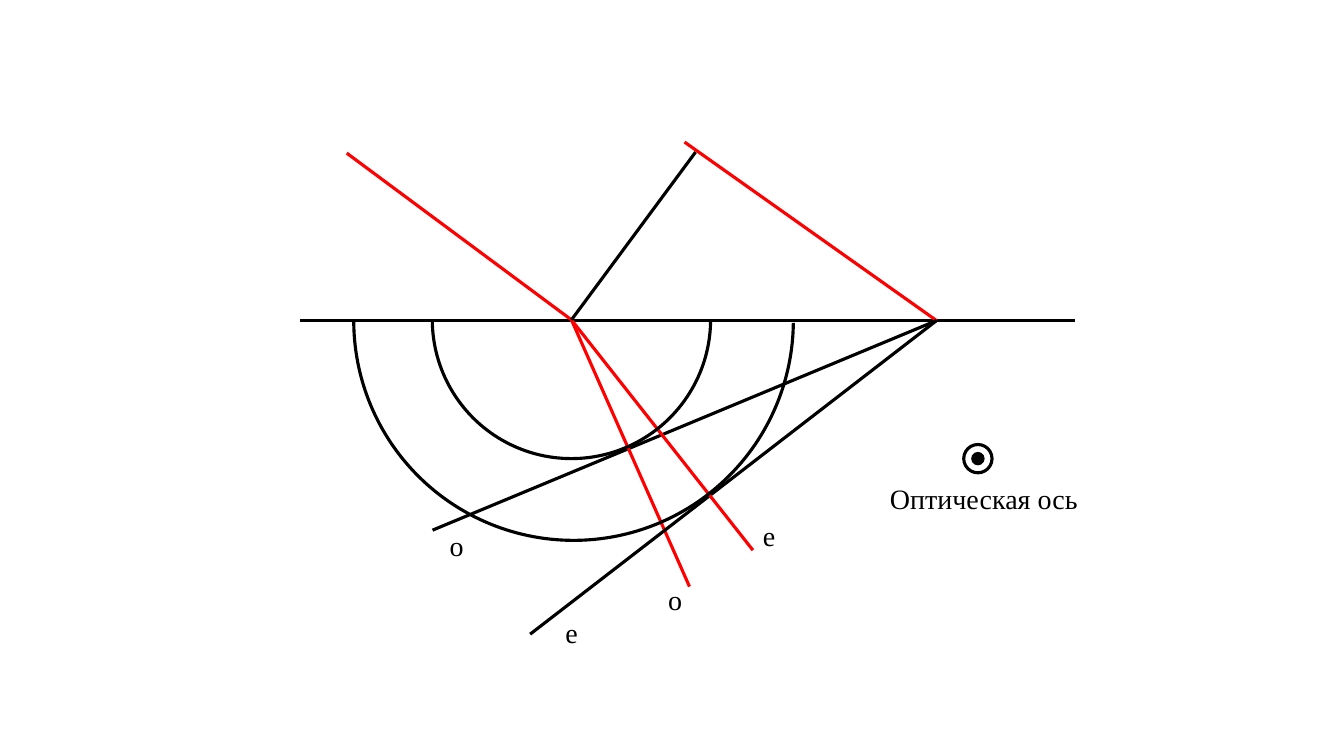
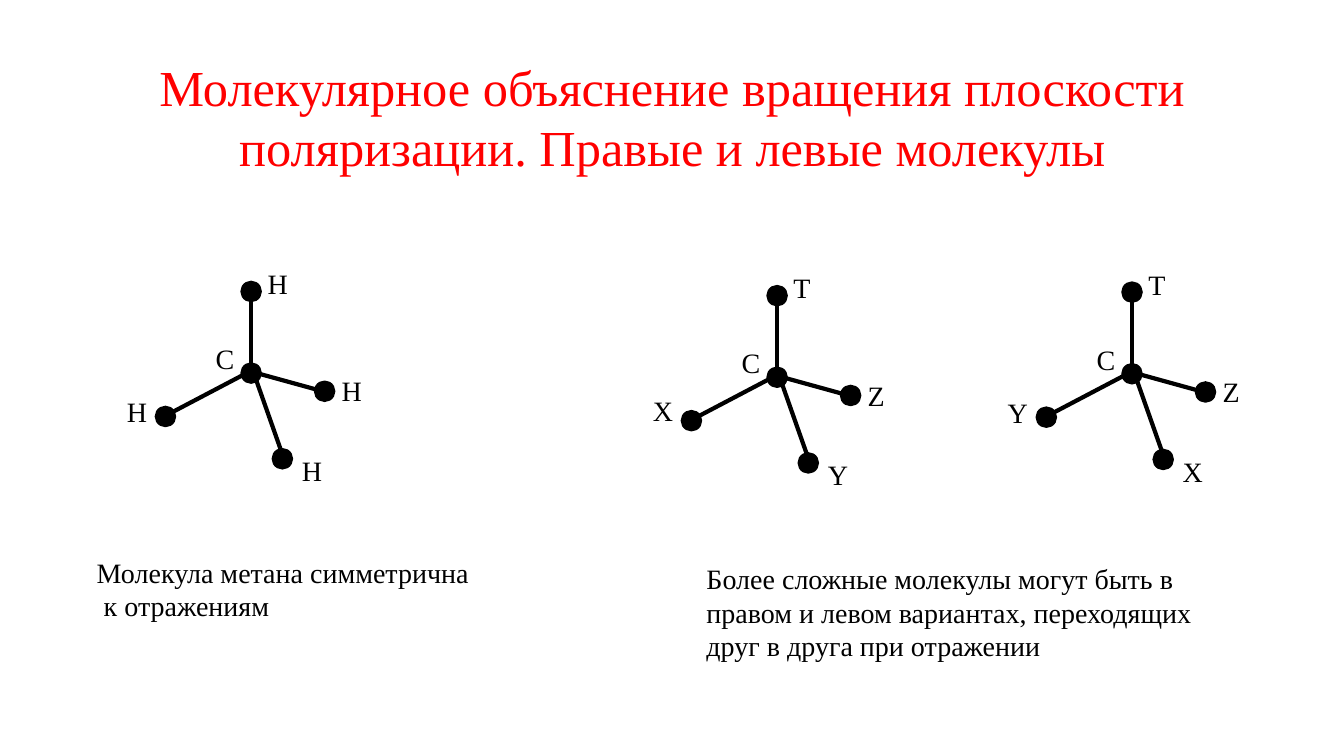
from lxml.etree import SubElement
from pptx import Presentation
from pptx.dml.color import RGBColor
from pptx.enum.shapes import MSO_CONNECTOR as CONNECTOR, MSO_SHAPE as SHAPE
from pptx.enum.text import MSO_ANCHOR as ANCHOR, MSO_AUTO_SIZE as AUTO_SIZE, PP_ALIGN as ALIGN
from pptx.oxml.ns import qn
from pptx.util import Pt

COLORS = {"ink": "000000", "accent": "FF0000", "paper": "FFFFFF"}
FONT = "Times New Roman"
BODY = {"name": FONT, "size": Pt(20)}
HEADING = {"name": FONT, "size": Pt(36)}
LABEL_SIZE = (32, 32)
ATOM_RADIUS = 7.2

CENTER_ATOM = (68.4, 65.5)
CENTER_LABEL = (36, 39.5)
ARMS = {
    "top": {"atom": (68.4, 7.2), "bond": ((68.4, 0), (68.4, 72)), "label": (73, -14)},
    "left": {"atom": (7.2, 96.5), "bond": ((2.2, 98.6), (73.4, 61.2)), "label": (-27.5, 77.5)},
    "right": {"atom": (120.9, 78.5), "bond": ((61.9, 62.6), (124.6, 79.9)), "label": (126, 62.5)},
    "bottom": {"atom": (90.7, 126.7), "bond": ((67.7, 58.3), (93.6, 131.7)), "label": (97.5, 119.5)},
}


def color(name):
    return RGBColor.from_string(COLORS[name])


def shift(origin, point):
    return origin[0] + point[0], origin[1] + point[1]


def points(*values):
    return [Pt(value) for value in values]


def write(box, lines, style, tone="ink", align=ALIGN.LEFT, anchor=ANCHOR.TOP):
    frame = box.text_frame
    frame_format = {"word_wrap": True, "auto_size": AUTO_SIZE.NONE, "vertical_anchor": anchor}
    for key, value in frame_format.items():
        setattr(frame, key, value)
    for index, line in enumerate(lines):
        para = frame.add_paragraph() if index else frame.paragraphs[0]
        para.alignment = align
        span = para.add_run()
        span.text = line
        for key, value in style.items():
            setattr(span.font, key, value)
        span.font.color.rgb = color(tone)


def add_text(shapes, origin, size, *lines):
    write(shapes.add_textbox(*points(*origin, *size)), lines, BODY)


def add_line(shapes, start, end, tone="ink", width=2.25):
    line = shapes.add_connector(CONNECTOR.STRAIGHT, *points(*start, *end))
    line.line.color.rgb = color(tone)
    line.line.width = Pt(width)
    SubElement(line._element.spPr, qn("a:effectLst"))


def add_round(shapes, center, radius, kind=SHAPE.OVAL, fill=None, width=2.25):
    corner = shift(center, (-radius, -radius))
    shape = shapes.add_shape(kind, *points(*corner, 2 * radius, 2 * radius))
    shape.shadow.inherit = False
    shape.line.color.rgb = color("ink")
    shape.line.width = Pt(width)
    if fill:
        shape.fill.solid()
        shape.fill.fore_color.rgb = color(fill)
    else:
        shape.fill.background()
    return shape


def add_refraction(page, origin):
    shapes = page.shapes.add_group_shape().shapes
    entry, far_entry = (194.2, 156.5), (455, 157)
    lines = [
        ((0, 157), (554, 157), "ink"),
        (entry, (33.7, 37.4), "accent"),
        (far_entry, (275, 29.5), "accent"),
        (far_entry, (95, 306.7), "ink"),
        (entry, (278.5, 347), "accent"),
        (far_entry, (164.7, 381), "ink"),
        (entry, (323.8, 321), "accent"),
        (entry, (282.8, 36.7), "ink"),
    ]
    for start, end, tone in lines:
        add_line(shapes, shift(origin, start), shift(origin, end), tone)
    waves = [((194.2, 156.2), 99.4, (0.12, 107.71)), ((195.7, 157), 157, (0.35, 108.03))]
    for center, radius, angles in waves:
        arc = add_round(shapes, shift(origin, center), radius, SHAPE.ARC)
        for index, angle in enumerate(angles):
            arc.adjustments[index] = angle
    labels = [("o", (100, 301.7)), ("o", (256.2, 340.6)), ("e", (182.7, 364.3)), ("e", (323.8, 294.5))]
    for letter, place in labels:
        add_text(shapes, shift(origin, place), LABEL_SIZE, letter)
    add_text(shapes, shift(origin, (414.6, 268.6)), (160, 32), "Оптическая ось")
    axis = shift(origin, (484.5, 255.6))
    add_round(shapes, axis, 10.1)
    add_round(shapes, axis, 4.3, fill="ink", width=1)


def add_molecule(page, origin, letters, left_drop=0):
    shapes = page.shapes.add_group_shape().shapes
    for center in [CENTER_ATOM] + [arm["atom"] for arm in ARMS.values()]:
        add_round(shapes, shift(origin, center), ATOM_RADIUS, fill="ink", width=1)
    add_text(shapes, shift(origin, CENTER_LABEL), LABEL_SIZE, "C")
    for (side, arm), letter in zip(ARMS.items(), letters):
        start, end = arm["bond"]
        add_line(shapes, shift(origin, start), shift(origin, end), width=3)
        drop = left_drop if side == "left" else 0
        add_text(shapes, shift(origin, shift(arm["label"], (0, drop))), LABEL_SIZE, letter)


def add_title(page, text):
    title = page.shapes.title
    for key, value in zip(("left", "top", "width", "height"), points(63.4, 36, 833.8, 94.3)):
        setattr(title, key, value)
    write(title, [text], HEADING, "accent", ALIGN.CENTER, ANCHOR.MIDDLE)


def add_page(deck, layout):
    page = deck.slides.add_slide(deck.slide_layouts.get_by_name(layout))
    page.background.fill.solid()
    page.background.fill.fore_color.rgb = color("paper")
    return page


def build_refraction_page(deck):
    add_refraction(add_page(deck, "Blank"), (214, 72))


def build_molecule_page(deck):
    page = add_page(deck, "Title Only")
    add_title(page, "Молекулярное объяснение вращения плоскости поляризации. Правые и левые молекулы")
    add_molecule(page, (111, 201), "HHHH")
    add_molecule(page, (740.2, 201.5), "TYZX")
    add_molecule(page, (486.7, 204), "TXZY", left_drop=-4)
    add_text(page.shapes, (62, 393), (290, 56), "Молекула метана симметрична", " к отражениям")
    add_text(
        page.shapes, (497.5, 397.5), (382.3, 80),
        "Более сложные молекулы могут быть в правом и левом вариантах, "
        "переходящих друг в друга при отражении",
    )


def main():
    deck = Presentation()
    deck.slide_width, deck.slide_height = points(960, 540)
    build_refraction_page(deck)
    build_molecule_page(deck)
    deck.save("out.pptx")


if __name__ == "__main__":
    main()
